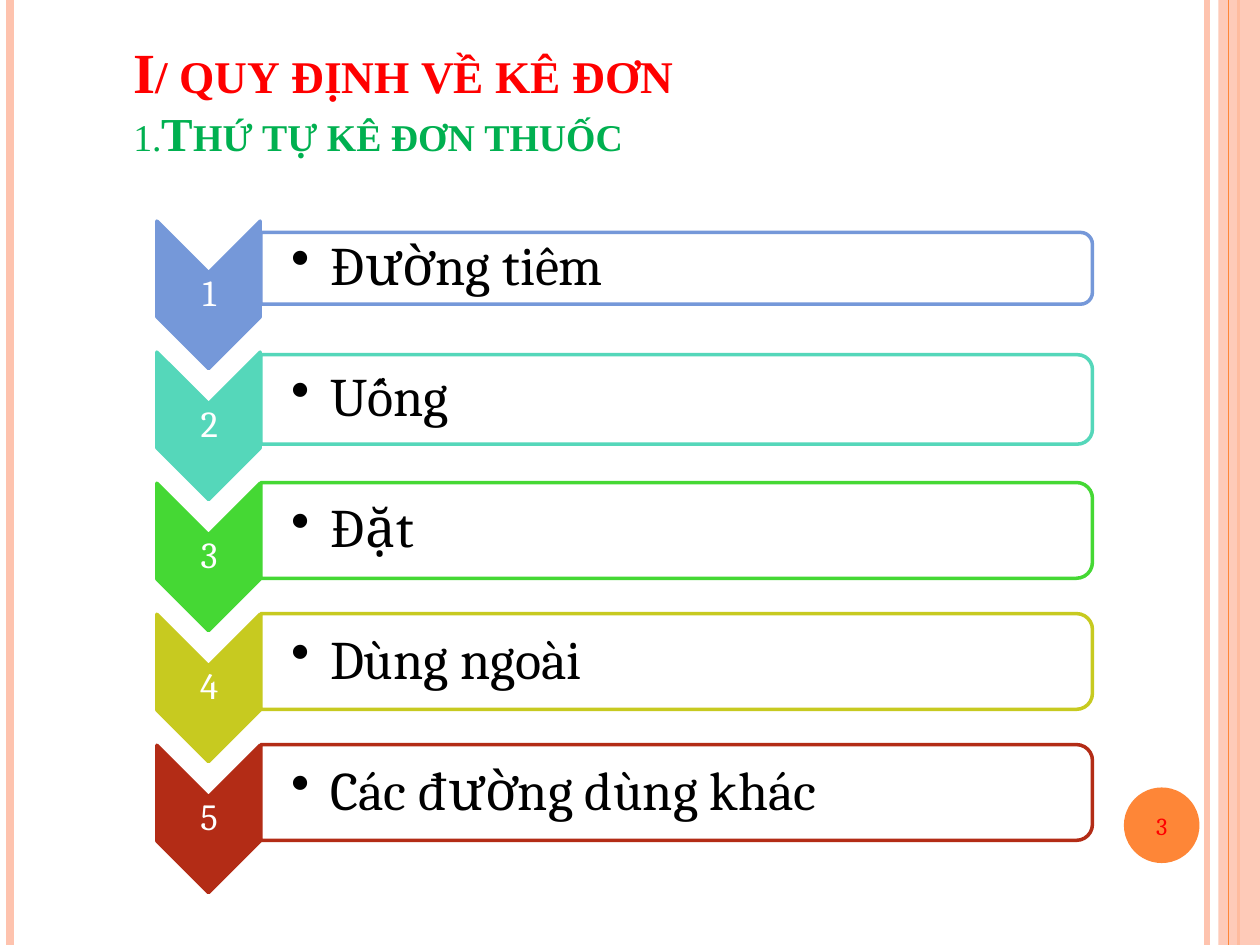
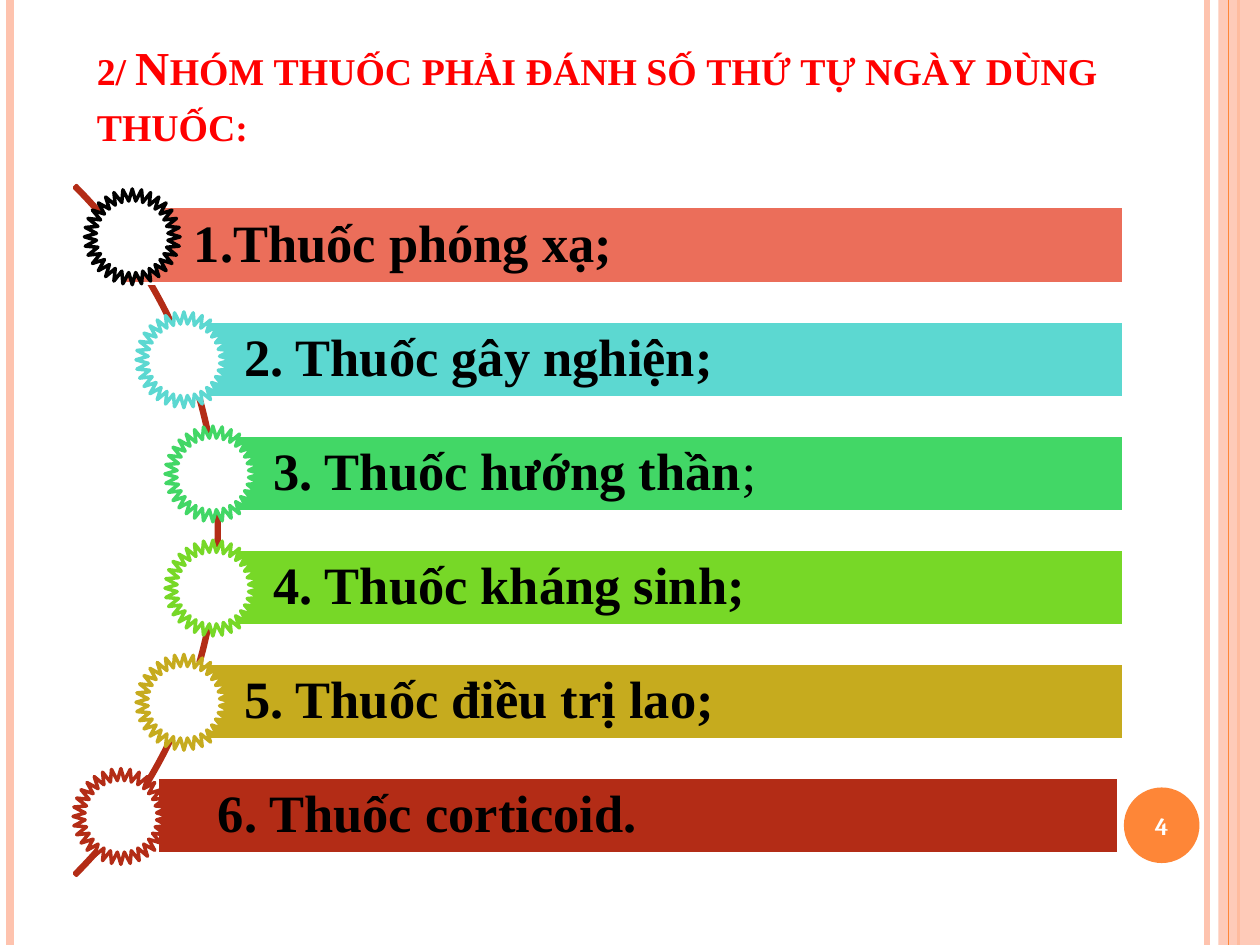
from lxml import etree
from pptx import Presentation
from pptx import util as u
from pptx.dml.color import RGBColor
from pptx.enum import shapes, text
from pptx.oxml.ns import qn

SHAPE = shapes.MSO_SHAPE
ALIGN = text.PP_ALIGN
ANCHOR = text.MSO_ANCHOR
color = RGBColor.from_string

WIDTH, HEIGHT = 10, 7.5
ORANGE, PEACH, RED, GREEN = "FE8637", "FEC3AE", "FF0000", "00B050"
BRICK, WHITE, BLACK = "B32C16", "FFFFFF", "000000"
SERIF, BODY = "Times New Roman", "Cambria"


def draw(slide, kind, box, fill=None, line=None, turn=0):
    """Add a preset shape, or a text box when kind is None; box is in inches."""
    frame = [u.Inches(length) for length in box]
    if kind is None:
        return slide.shapes.add_textbox(*frame)
    shape = slide.shapes.add_shape(kind, *frame)
    shape.shadow.inherit = False
    shape.rotation = turn
    if fill:
        shape.fill.solid()
        shape.fill.fore_color.rgb = color(fill)
    else:
        shape.fill.background()
    if line:
        shape.line.color.rgb = color(line)
        shape.line.width = u.Pt(2)
    else:
        shape.line.fill.background()
    return shape


def write(shape, paragraphs, font=BODY, size=30, hue=BLACK, bold=False, caps=False,
          align=ALIGN.LEFT, anchor=ANCHOR.MIDDLE, insets=(0.1, 0.05, 0.1, 0.05),
          spacing=None, bullet=None):
    """Fill a shape with paragraphs, each a list of (text, overrides) runs."""
    frame = shape.text_frame
    frame.word_wrap = True
    frame.vertical_anchor = anchor
    (frame.margin_left, frame.margin_top,
     frame.margin_right, frame.margin_bottom) = [u.Inches(i) for i in insets]
    for number, runs in enumerate(paragraphs):
        paragraph = frame.add_paragraph() if number else frame.paragraphs[0]
        paragraph.alignment = align
        if spacing:
            paragraph.line_spacing = spacing
        if bullet:
            props = paragraph._p.get_or_add_pPr()
            props.set("marL", str(u.Inches(0.31)))
            props.set("indent", str(u.Inches(-0.31)))
            etree.SubElement(props, qn("a:buChar")).set("char", bullet)
        for words, change in runs:
            run = paragraph.add_run()
            run.text = words
            run.font.name = font
            run.font.size = u.Pt(change.get("size", size))
            run.font.bold = change.get("bold", bold)
            run.font.color.rgb = color(change.get("hue", hue))
            if caps:
                run._r.get_or_add_rPr().set("cap", "small")


deck = Presentation()
deck.slide_width, deck.slide_height = u.Inches(WIDTH), u.Inches(HEIGHT)

# Shared side bands, titles and page badges
pages = [
    dict(number="3", number_hue=RED, number_bold=False, title_box=(0.96, 0.3, 7.71, 1.03),
         title=[[("I/ quy định về kê đơn", dict(size=32.4))],
                [("1.", dict(hue=GREEN, bold=False)),
                 ("Thứ tự kê đơn thuốc", dict(hue=GREEN))]]),
    dict(number="4", number_hue=WHITE, number_bold=True, title_box=(0.67, 0.3, 8.42, 0.95),
         title=[[("2/ Nhóm thuốc phải đánh số thứ tự ngày dùng thuốc:", {})]]),
]
side_lines = [(9.58, PEACH, 3), (0.08, PEACH, 4.5), (9.83, ORANGE, 1.5), (9.75, ORANGE, 0.75)]

for page in pages:
    slide = deck.slides.add_slide(deck.slide_layouts[6])
    for x, hue, weight in side_lines:
        if x == 9.75:  # the translucent band lies under the last line only
            band = draw(slide, SHAPE.RECTANGLE, (9.67, 0, 0.33, HEIGHT), PEACH)
            band_color = band.fill._xPr.find(qn("a:solidFill"))[0]
            etree.SubElement(band_color, qn("a:alpha")).set("val", "87000")
        side = slide.shapes.add_connector(shapes.MSO_CONNECTOR.STRAIGHT, u.Inches(x), 0,
                                          u.Inches(x), u.Inches(HEIGHT))
        side.line.color.rgb = color(hue)
        side.line.width = u.Pt(weight)
        etree.SubElement(side._element.spPr, qn("a:effectLst"))
    badge = draw(slide, SHAPE.OVAL, (8.92, 6.25, 0.6, 0.6), ORANGE)
    write(badge, [[(page["number"], {})]], size=14, hue=page["number_hue"],
          bold=page["number_bold"], align=ALIGN.CENTER, insets=(0, 0, 0, 0))
    write(draw(slide, None, page["title_box"]), page["title"], font=SERIF, size=27,
          hue=RED, bold=True, caps=True, anchor=ANCHOR.BOTTOM)

order_slide, group_slide = deck.slides

# Order of prescribing: a chevron and a bar per step
steps = [
    ("Đường tiêm", "7598D9", 0.57),
    ("Uống", "55D7BA", 0.71),
    ("Đặt", "45D834", 0.76),
    ("Dùng ngoài", "C7CA20", 0.76),
    ("Các đường dùng khác", BRICK, 0.76),
]
STEP_TOP, STEP_PITCH = 2.13, 1.04
BAR_LEFT, BAR_LENGTH = 2.07, 6.6
for index, (route, hue, depth) in enumerate(steps):
    middle = STEP_TOP + index * STEP_PITCH
    draw(order_slide, SHAPE.CHEVRON, (1.07, middle - 0.2, 1.17, 0.82), hue, hue, turn=90)
    write(draw(order_slide, None, (1.25, middle + 0.03, 0.82, 0.35)),
          [[(str(index + 1), {})]], size=21, hue=WHITE, align=ALIGN.CENTER,
          insets=[0.01] * 4, spacing=0.9)
    draw(order_slide, SHAPE.ROUND_2_SAME_RECTANGLE,
         (BAR_LEFT + (BAR_LENGTH - depth) / 2, middle - BAR_LENGTH / 2, depth, BAR_LENGTH),
         WHITE, hue, turn=90)
    write(draw(order_slide, None, (BAR_LEFT, middle - depth / 2, BAR_LENGTH, depth)),
          [[(route, {})]], size=31, insets=(0.24, 0.02, 0.02, 0.02), spacing=0.9, bullet="•")

# Drug groups: bars and stars strung along an arc
arc = draw(group_slide, SHAPE.BLOCK_ARC, (-6, 0.34, 7.74, 7.74), line=BRICK)
for index, value in enumerate((189, 27, 0.003)):
    arc.adjustments[index] = value

groups = [  # runs, bar colour, star colour, bar left, bar right, star left, star top shift, inset
    ([("1.Thuốc phóng xạ;", {})], "EB6E5A", BLACK, 0.96, 8.92, 0.67, -0.14, 0.58),
    ([("2. Thuốc gây nghiện;", {})], "5CD8D1", "5CD8D1", 1.46, 8.92, 1.08, -0.07, 0.48),
    ([("3. Thuốc hướng thần", {}), (";", dict(bold=False))],
     "42D766", "42D766", 1.69, 8.92, 1.31, -0.07, 0.48),
    ([("4. Thuốc kháng sinh;", {})], "77D827", "77D827", 1.69, 8.92, 1.31, -0.07, 0.48),
    ([("5. Thuốc điều trị lao;", {})], "C6AB1E", "C6AB1E", 1.46, 8.92, 1.08, -0.07, 0.48),
    ([("6. Thuốc corticoid.", {})], BRICK, BRICK, 1.25, 8.88, 0.58, -0.07, 0.48),
]
GROUP_TOP, GROUP_PITCH, STAR = 1.64, 0.906, 0.76
for index, (runs, hue, star_hue, left, right, star_left, shift, inset) in enumerate(groups):
    top = GROUP_TOP + index * GROUP_PITCH
    bar = draw(group_slide, SHAPE.RECTANGLE, (left, top, right - left, 0.61), hue, WHITE)
    write(bar, [runs], font=SERIF, bold=True, insets=(inset, 0.08, 0.08, 0.08), spacing=0.9)
    draw(group_slide, SHAPE.STAR_32_POINT, (star_left, top + shift, STAR, STAR), WHITE, star_hue)

deck.save("out.pptx")
